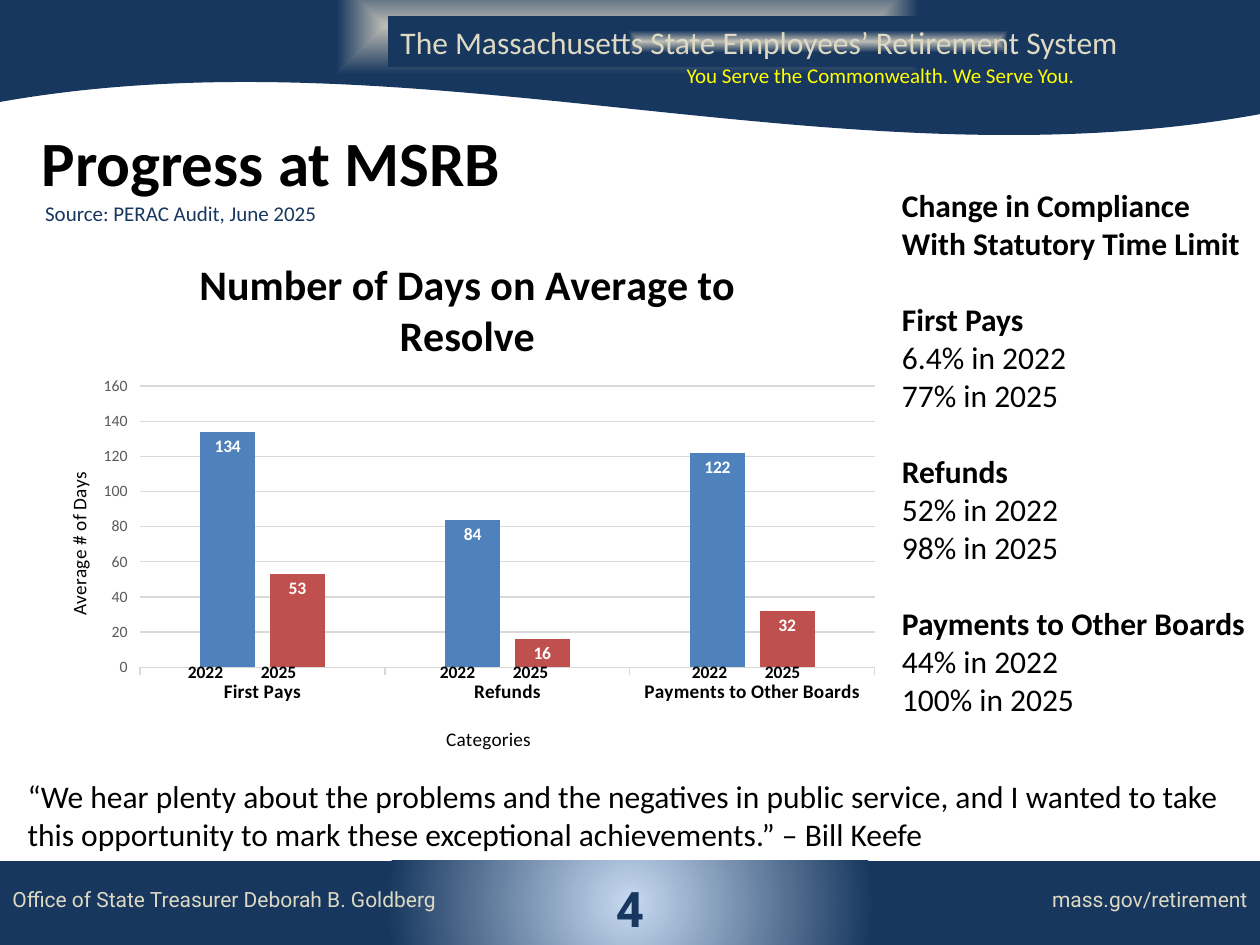
from dataclasses import dataclass

from pptx import Presentation
from pptx import util as u
from pptx.chart import data as chart_data
from pptx.dml import color
from pptx.enum import chart as charts, shapes, text
from pptx.oxml import parse_xml
from pptx.oxml.ns import nsdecls, qn


@dataclass(frozen=True)
class Theme:
    body: str = "Calibri"
    band: str = "Roboto"
    black: str = "000000"
    white: str = "FFFFFF"
    navy: str = "17375E"
    pale_blue: str = "C6D9F1"
    stone: str = "BEBDB5"
    cream: str = "DDD9C3"
    yellow: str = "FFFF00"
    grid: str = "D9D9D9"
    tick: str = "595959"
    bars: tuple = ("4F81BD", "C0504D")
    title: int = 36
    page_number: int = 28
    chart_title: int = 24
    text: int = 18
    small: int = 12
    axis: int = 11
    label: int = 10
    scale: int = 9


THEME = Theme()
LEFT, CENTER, RIGHT = text.PP_ALIGN.LEFT, text.PP_ALIGN.CENTER, text.PP_ALIGN.RIGHT


def inches(box):
    return [u.Inches(value) for value in box]


def style(font, size, hue=THEME.black, bold=False, face=THEME.body):
    font.name, font.size, font.bold = face, u.Pt(size), bold
    font.color.rgb = color.RGBColor.from_string(hue)


def write(para, words, size, hue=THEME.black, bold=False, face=THEME.body, align=LEFT):
    para.alignment = align
    span = para.add_run()
    span.text = words
    style(span.font, size, hue, bold, face)


def add_text(page, box, words, size, margin=None, **look):
    frame = page.shapes.add_textbox(*inches(box)).text_frame
    frame.word_wrap = True
    if margin is not None:
        frame.margin_left = frame.margin_right = u.Inches(margin)
        frame.margin_top = frame.margin_bottom = u.Inches(margin)
    write(frame.paragraphs[0], words, size, **look)
    return frame


def add_glow(page, kind, box, path_kind, inner, reach):
    """Shape whose fill fades from its middle out to navy."""
    shape = page.shapes.add_shape(kind, *inches(box))
    shape.shadow.inherit = False
    shape.line.fill.background()
    shape.fill.background()
    stops = "".join(
        f'<a:gs pos="{position * 1000}"><a:srgbClr val="{hue}"/></a:gs>'
        for position, hue in ((0, inner), (reach, THEME.navy)))
    properties = shape.element.spPr
    properties.replace(properties.find(qn("a:noFill")), parse_xml(
        f'<a:gradFill {nsdecls("a")} rotWithShape="1"><a:gsLst>{stops}</a:gsLst>'
        f'<a:path path="{path_kind}">'
        '<a:fillToRect l="50000" t="50000" r="50000" b="50000"/></a:path></a:gradFill>'))
    return shape


def add_header(page, box):
    left, top, width, height = box
    kinds = shapes.MSO_SHAPE
    add_glow(page, kinds.WAVE, box, "rect", THEME.stone, 44)
    banner = add_glow(page, kinds.RECTANGLE, (left + 3.35, top + 0.8, 6.83, 0.4),
                      "rect", THEME.stone, 44)
    frame = banner.text_frame
    frame.word_wrap = True
    frame.vertical_anchor = text.MSO_ANCHOR.TOP
    write(frame.paragraphs[0], "The Massachusetts State Employees’ Retirement System",
          THEME.text, THEME.cream)
    add_text(page, (left + 5.62, top + 1.12, width - 5.85, 0.3),
             "You Serve the Commonwealth. We Serve You.", THEME.small, hue=THEME.yellow)


def add_footer(page, box):
    left, top, width, height = box
    add_glow(page, shapes.MSO_SHAPE.RECTANGLE, box, "circle", THEME.pale_blue, 35)
    look = dict(hue=THEME.cream, face=THEME.band)
    add_text(page, (0, top + 0.16, 3.83, 0.3),
             "Office of State Treasurer Deborah B. Goldberg", THEME.small, **look)
    add_text(page, (7.25, top + 0.16, 2.75, 0.3), "mass.gov/retirement",
             THEME.small, align=RIGHT, **look)
    number = add_text(page, (left + width / 2 - 0.5, top + 0.27, 1, 0.21), "4",
                      THEME.page_number, hue=THEME.navy, bold=True,
                      face=THEME.band, align=CENTER)
    number.vertical_anchor = text.MSO_ANCHOR.MIDDLE


def add_heading(page, box):
    left, top, width, height = box
    title = page.shapes.title
    title.left, title.top, title.width, title.height = inches(box)
    title.text_frame.vertical_anchor = text.MSO_ANCHOR.TOP
    write(title.text_frame.paragraphs[0], "Progress at MSRB", THEME.title, bold=True)
    add_text(page, (left + 0.03, top + 0.61, width, 0.42),
             "Source: PERAC Audit, June 2025", THEME.small, hue=THEME.navy)


def pin(element, index, x, y, size=None):
    """Fix a chart part at a fraction of the chart area."""
    for old in element.findall(qn("c:layout")):
        element.remove(old)
    places = {"xMode": "edge", "yMode": "edge", "x": x, "y": y}
    if size:
        places = {"layoutTarget": "inner", **places, "w": size[0], "h": size[1]}
    marks = "".join(f'<c:{name} val="{value}"/>' for name, value in places.items())
    element.insert(index, parse_xml(
        f'<c:layout {nsdecls("c")}><c:manualLayout>{marks}</c:manualLayout></c:layout>'))


def name_part(part, words, size, x, y, bold=False):
    write(part.text_frame.paragraphs[0], words, size, bold=bold, align=None)
    pin(part._element, 1, x, y)


def add_days_chart(page, box):
    days = chart_data.CategoryChartData()
    days.categories = ["First Pays", "Refunds", "Payments to Other Boards"]
    days.add_series("Series 1", (134, 84, 122))
    days.add_series("Series 2", (53, 16, 32))
    chart = page.shapes.add_chart(
        charts.XL_CHART_TYPE.COLUMN_CLUSTERED, *inches(box), days).chart
    style(chart.font, THEME.label)
    chart.has_legend = False
    chart.has_title = True
    name_part(chart.chart_title, "Number of Days on Average to Resolve",
              THEME.chart_title, 0.19, 0.05, bold=True)
    pin(chart._chartSpace.chart.plotArea, 0, 0.13, 0.3, (0.85, 0.51))

    # Columns and their values
    plot = chart.plots[0]
    plot.gap_width, plot.overlap, plot.vary_by_categories = 219, -27, False
    for series, hue in zip(plot.series, THEME.bars):
        series.format.fill.solid()
        series.format.fill.fore_color.rgb = color.RGBColor.from_string(hue)
        labels = series.data_labels
        labels.show_value = True
        labels.position = charts.XL_LABEL_POSITION.INSIDE_END
        style(labels.font, THEME.label, THEME.white, bold=True)

    # Axes
    kinds, amounts = chart.category_axis, chart.value_axis
    amounts.minimum_scale, amounts.maximum_scale, amounts.major_unit = 0, 160, 20
    amounts.has_major_gridlines = True
    amounts.format.line.fill.background()
    for line in (kinds.format.line, amounts.major_gridlines.format.line):
        line.color.rgb = color.RGBColor.from_string(THEME.grid)
        line.width = u.Pt(0.75)
    style(kinds.tick_labels.font, THEME.axis, bold=True)
    style(amounts.tick_labels.font, THEME.scale, THEME.tick)
    name_part(kinds.axis_title, "Categories", THEME.axis, 0.48, 0.91)
    name_part(amounts.axis_title, "Average # of Days", THEME.axis, 0.04, 0.45)

    # Year under each column
    left, top = box[:2]
    for group in range(3):
        for place, year in enumerate(("2022", "2025")):
            add_text(page, (left + 1.2 + 2 * group + 0.58 * place, top + 3.5, 0.42, 0.17),
                     year, THEME.label, margin=0, bold=True, align=CENTER)


def add_compliance(page, box):
    frame = add_text(page, box, "Change in Compliance", THEME.text, bold=True)
    write(frame.add_paragraph(), "With Statutory Time Limit", THEME.text, bold=True)
    for name, before, after in (("First Pays", "6.4%", "77%"),
                                ("Refunds", "52%", "98%"),
                                ("Payments to Other Boards", "44%", "100%")):
        para = frame.add_paragraph()
        para.space_before = u.Pt(22)
        write(para, name, THEME.text, bold=True)
        for share, year in ((before, 2022), (after, 2025)):
            write(frame.add_paragraph(), f"{share} in {year}", THEME.text)


def main():
    deck = Presentation()
    deck.slide_width, deck.slide_height = u.Inches(10), u.Inches(7.5)
    page = deck.slides.add_slide(deck.slide_layouts[5])
    add_footer(page, (-0.54, 6.83, 11.08, 0.67))
    add_header(page, (-0.27, -0.67, 10.5, 1.75))
    add_days_chart(page, (0.22, 1.75, 6.86, 4.38))
    add_heading(page, (0.23, 0.93, 8.17, 0.94))
    add_compliance(page, (7.06, 1.43, 2.92, 4.64))
    add_text(page, (0.12, 6.12, 9.75, 0.71),
             "“We hear plenty about the problems and the negatives in public service, "
             "and I wanted to take this opportunity to mark these exceptional "
             "achievements.” – Bill Keefe", THEME.text)
    deck.save("out.pptx")


if __name__ == "__main__":
    main()
